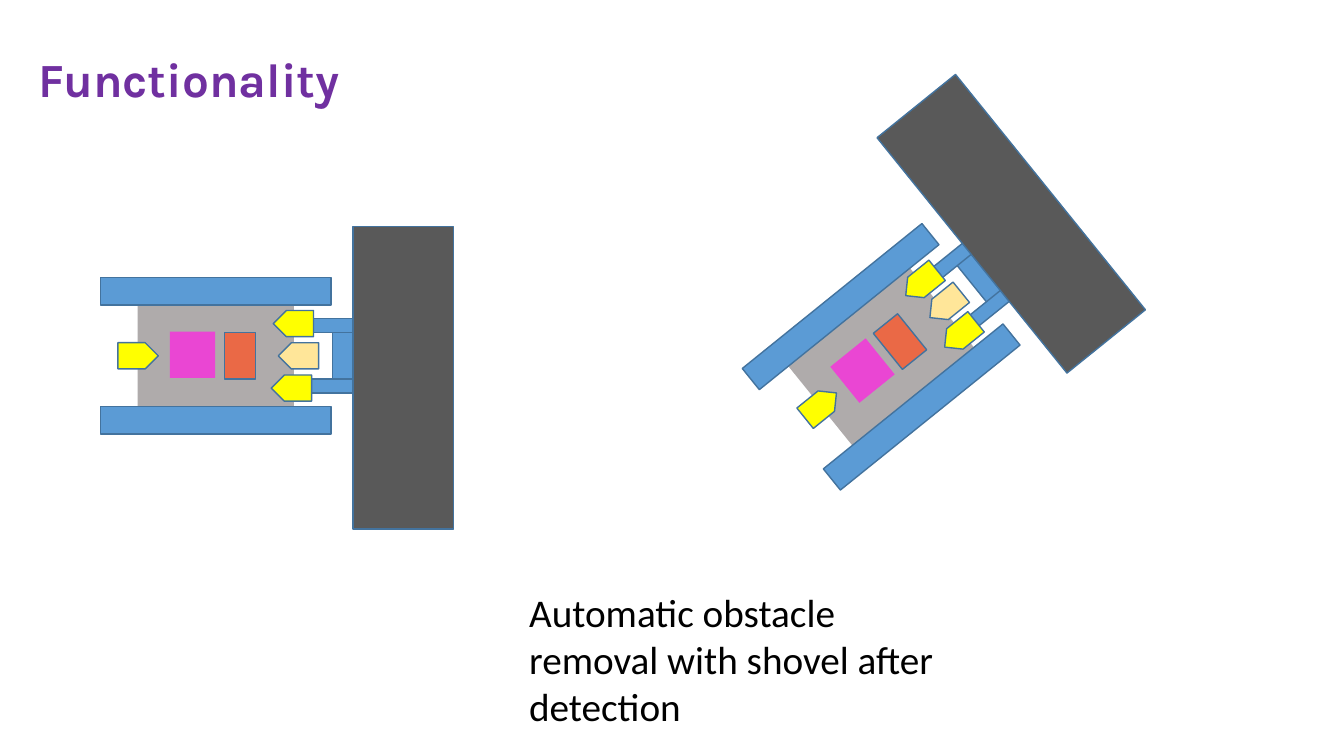
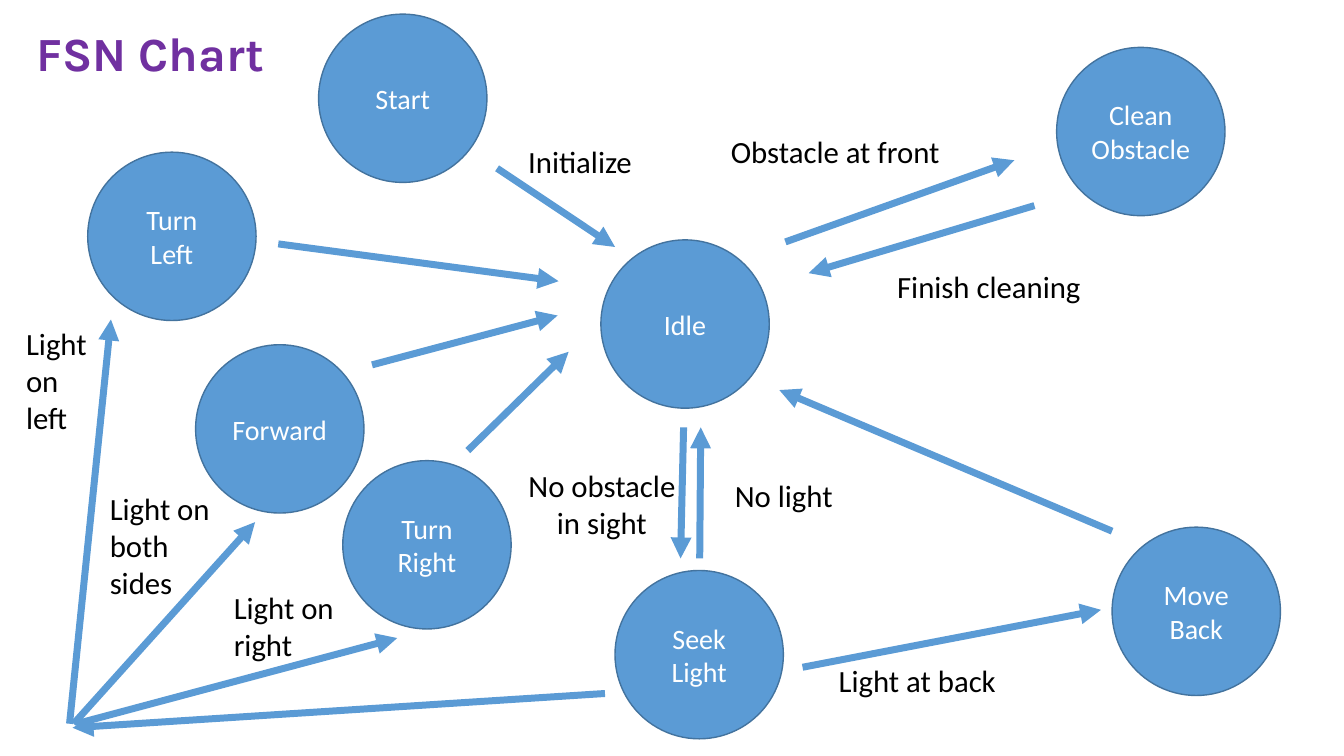
from math import cos, radians, sin

from lxml import etree
from pptx import Presentation
from pptx.dml.color import RGBColor
from pptx.enum.shapes import MSO_CONNECTOR, MSO_SHAPE as SHAPE
from pptx.enum.text import MSO_ANCHOR, MSO_AUTO_SIZE, PP_ALIGN as ALIGN
from pptx.oxml.ns import qn
from pptx.util import Inches, Pt

BLUE = RGBColor(0x5B, 0x9B, 0xD5)
OUTLINE = RGBColor(0x43, 0x73, 0x9E)
PURPLE = RGBColor(0x70, 0x30, 0xA0)
BLACK = RGBColor(0, 0, 0)
WHITE = RGBColor(255, 255, 255)
GRAY = RGBColor(0xAF, 0xAB, 0xAB)
ROCK_GRAY = RGBColor(0x59, 0x59, 0x59)
YELLOW = RGBColor(255, 255, 0)
PALE_YELLOW = RGBColor(0xFF, 0xE6, 0x99)
MAGENTA = RGBColor(0xEA, 0x46, 0xD3)
ORANGE = RGBColor(0xEA, 0x69, 0x46)

STATE_SIZE = 1.67
TURN = -38.9

ROBOT_PARTS = [
    (SHAPE.RECTANGLE, 1.26, 0, 0.21, 0.49, 0, BLUE, OUTLINE),
    (SHAPE.RECTANGLE, 0, 0, 1.55, 1.02, 0, GRAY, None),
    (SHAPE.RECTANGLE, 0, -0.64, 2.29, 0.27, 0, BLUE, OUTLINE),
    (SHAPE.RECTANGLE, 0, 0.64, 2.29, 0.27, 0, BLUE, OUTLINE),
    (SHAPE.PENTAGON, -0.77, 0, 0.4, 0.26, 0, YELLOW, OUTLINE),
    (SHAPE.RECTANGLE, 1.3, -0.3, 1.22, 0.14, 0, BLUE, OUTLINE),
    (SHAPE.PENTAGON, 0.77, -0.32, 0.4, 0.26, 180, YELLOW, OUTLINE),
    (SHAPE.RECTANGLE, 1.31, 0.3, 1.22, 0.14, 0, BLUE, OUTLINE),
    (SHAPE.PENTAGON, 0.82, 0, 0.4, 0.26, 180, PALE_YELLOW, OUTLINE),
    (SHAPE.PENTAGON, 0.75, 0.32, 0.4, 0.26, 180, YELLOW, OUTLINE),
    (SHAPE.RECTANGLE, -0.23, -0.01, 0.45, 0.46, 0, MAGENTA, None),
    (SHAPE.RECTANGLE, 0.24, 0, 0.31, 0.46, 0, ORANGE, OUTLINE),
]

ROCK_OUTLINE = [
    (4.05, 4.62), (3.99, 4.49), (3.96, 4.42), (3.92, 4.34), (3.91, 4.27),
    (3.88, 4.21), (3.79, 4.01), (3.7, 3.88), (3.59, 3.65), (3.5, 3.52),
    (3.53, 3.42), (3.56, 3.37), (3.65, 3.21), (3.72, 3.04), (3.75, 2.91),
    (3.72, 2.81), (3.78, 2.53), (3.82, 2.49), (4.04, 2.37), (4.09, 2.36),
    (4.22, 2.3), (4.38, 2.29), (4.8, 2.27), (4.97, 2.25), (5.2, 2.29),
    (5.25, 2.33), (5.34, 2.45), (5.37, 2.49), (5.4, 2.56), (5.47, 2.76),
    (5.43, 3.39), (5.4, 3.57), (5.4, 3.59), (5.33, 3.94), (5.32, 4.1),
    (5.33, 4.42), (5.3, 4.95), (5.24, 5.05), (5.21, 5.1), (5.11, 5.11),
    (5.02, 5.14), (4.76, 5.16), (4.53, 5.14), (4.49, 5.11), (4.46, 5.07),
    (4.43, 5.04), (4.41, 5.03),
]

STATES = [
    ("Start", 3.16, 0.14), ("Forward", 1.94, 3.42), ("Clean Obstacle", 10.48, 0.47),
    ("Idle", 5.96, 2.38), ("Move Back", 11.03, 5.23), ("Seek Light", 6.1, 5.66),
    ("Turn Left", 0.87, 1.51), ("Turn Right", 3.4, 4.57),
]

TRANSITIONS = [
    (3.69, 3.62, 5.53, 3.13), (7.96, 6.62, 10.92, 6.05), (4.93, 1.67, 6.1, 2.45),
    (7.79, 2.4, 10.06, 1.59), (10.26, 2.04, 8.02, 2.71), (6.78, 4.24, 6.75, 5.54),
    (6, 6.88, 0.72, 7.22), (11.03, 5.27, 7.73, 3.87), (6.94, 5.54, 6.95, 4.24),
    (0.76, 7.18, 3.94, 6.33), (4.64, 4.47, 5.64, 3.49), (2.76, 2.42, 5.54, 2.79),
    (0.69, 7.18, 1.1, 3.17), (0.73, 7.18, 2.53, 5.18),
]

CONDITIONS = [
    ("Light at back", 8.22, 6.52, 2.09, 0.47, ALIGN.LEFT),
    ("Obstacle at front", 7.15, 1.27, 2.52, 0.47, ALIGN.LEFT),
    ("No obstacle in sight", 5.11, 4.58, 1.72, 0.84, ALIGN.CENTER),
    ("Finish cleaning", 8.8, 2.61, 2.23, 0.47, ALIGN.LEFT),
    ("Initialize", 5.14, 1.37, 1.38, 0.47, ALIGN.LEFT),
    ("No light", 7.19, 4.68, 1.22, 0.47, ALIGN.LEFT),
    ("Light on left", 0.16, 3.17, 0.98, 1.21, ALIGN.LEFT),
    ("Light on both sides", 0.99, 4.81, 1.38, 1.21, ALIGN.LEFT),
    ("Light on right", 2.22, 5.79, 1.58, 0.84, ALIGN.LEFT),
]


def paint(shape, fill, outline):
    shape.shadow.inherit = False
    shape.fill.solid()
    shape.fill.fore_color.rgb = fill
    if outline is None:
        shape.line.fill.background()
    else:
        shape.line.color.rgb = outline
        shape.line.width = Pt(1)


def write(frame, text, size, color, align=ALIGN.LEFT, font="Calibri", bold=False):
    frame.text = text
    paragraph = frame.paragraphs[0]
    paragraph.alignment = align
    run_font = paragraph.runs[0].font
    run_font.name = font
    run_font.size = Pt(size)
    run_font.bold = bold
    run_font.color.rgb = color


def add_label(slide, text, left, top, width, height, size, color=BLACK, wrap=True, **style):
    box = slide.shapes.add_textbox(Inches(left), Inches(top), Inches(width), Inches(height))
    box.text_frame.word_wrap = wrap
    box.text_frame.auto_size = MSO_AUTO_SIZE.SHAPE_TO_FIT_TEXT
    write(box.text_frame, text, size, color, **style)


def add_title(slide, text, left, top, width):
    add_label(slide, text, left, top, width, 0.67, 34, PURPLE, wrap=False,
              align=ALIGN.CENTER, font="Karla", bold=True)


def add_robot(slide, center_x, center_y, angle=0):
    robot = slide.shapes.add_group_shape()
    cosine, sine = cos(radians(angle)), sin(radians(angle))
    for kind, dx, dy, width, height, facing, fill, outline in ROBOT_PARTS:
        x = center_x + dx * cosine - dy * sine
        y = center_y + dx * sine + dy * cosine
        part = robot.shapes.add_shape(kind, Inches(x - width / 2), Inches(y - height / 2),
                                      Inches(width), Inches(height))
        part.rotation = facing + angle
        paint(part, fill, outline)


def add_rock(slide, left, top, angle=0):
    builder = slide.shapes.build_freeform(*ROCK_OUTLINE[0], scale=Inches(1))
    builder.add_line_segments(ROCK_OUTLINE[1:], close=True)
    rock = builder.convert_to_shape()
    rock.left, rock.top = Inches(left), Inches(top)
    rock.rotation = angle
    paint(rock, ROCK_GRAY, OUTLINE)


def add_state(slide, name, left, top):
    state = slide.shapes.add_shape(SHAPE.OVAL, Inches(left), Inches(top),
                                   Inches(STATE_SIZE), Inches(STATE_SIZE))
    paint(state, BLUE, OUTLINE)
    state.text_frame.word_wrap = True
    state.text_frame.vertical_anchor = MSO_ANCHOR.MIDDLE
    write(state.text_frame, name, 20, WHITE, ALIGN.CENTER)


def add_transition(slide, *ends):
    arrow = slide.shapes.add_connector(MSO_CONNECTOR.STRAIGHT, *map(Inches, ends))
    arrow.line.color.rgb = BLUE
    arrow.line.width = Pt(5)
    properties = arrow._element.spPr
    etree.SubElement(properties.find(qn("a:ln")), qn("a:tailEnd"), type="triangle")
    etree.SubElement(properties, qn("a:effectLst"))


def build_functionality(slide):
    add_robot(slide, 2.14, 3.53)
    add_rock(slide, 3.5, 2.25)
    add_robot(slide, 8.74, 3.54, TURN)
    add_rock(slide, 9.53, 0.72, TURN)
    add_title(slide, "Functionality", 0.24, 0.45, 3.27)
    add_label(slide, "Automatic obstacle removal with shovel after detection",
              5.15, 5.79, 4.22, 1.51, 28)


def build_state_chart(slide):
    for state in STATES:
        add_state(slide, *state)
    for transition in TRANSITIONS:
        add_transition(slide, *transition)
    for text, left, top, width, height, align in CONDITIONS:
        add_label(slide, text, left, top, width, height, 22, align=align)
    add_title(slide, "FSN Chart", 0.22, 0.19, 2.54)


def main():
    presentation = Presentation()
    presentation.slide_width = Inches(13.33)
    presentation.slide_height = Inches(7.5)
    blank = presentation.slide_layouts[6]
    for build in (build_functionality, build_state_chart):
        build(presentation.slides.add_slide(blank))
    presentation.save("out.pptx")


if __name__ == "__main__":
    main()
